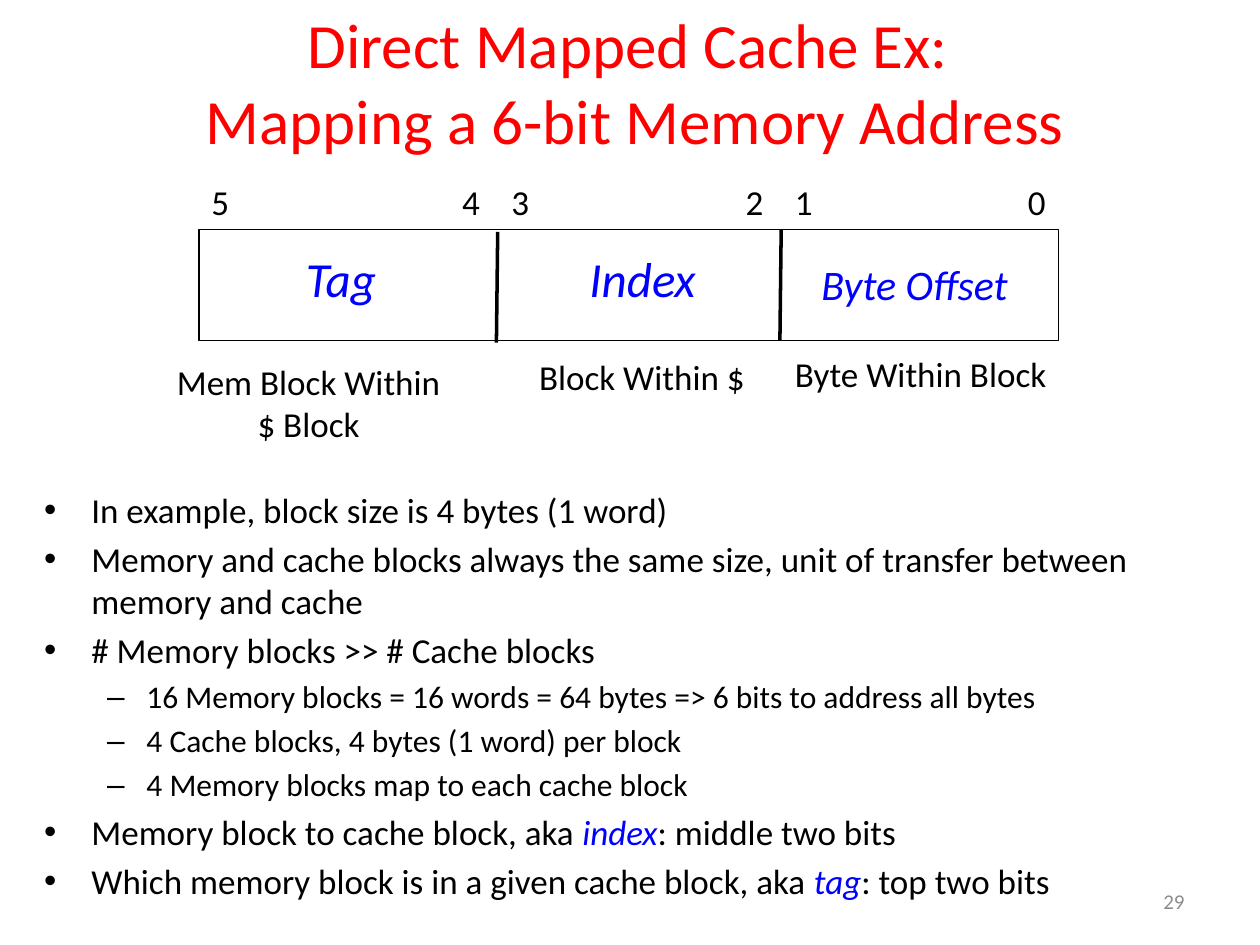
from dataclasses import dataclass

from lxml import etree
from pptx import Presentation
from pptx.dml.color import RGBColor
from pptx.enum.shapes import MSO_CONNECTOR, MSO_SHAPE
from pptx.enum.text import MSO_ANCHOR, MSO_AUTO_SIZE, PP_ALIGN
from pptx.oxml.ns import qn
from pptx.util import Inches, Pt

LEFT, CENTER, RIGHT = PP_ALIGN.LEFT, PP_ALIGN.CENTER, PP_ALIGN.RIGHT
TOP, MIDDLE = MSO_ANCHOR.TOP, MSO_ANCHOR.MIDDLE
FIXED, GROW = MSO_AUTO_SIZE.NONE, MSO_AUTO_SIZE.SHAPE_TO_FIT_TEXT
RECTANGLE = MSO_SHAPE.RECTANGLE
STRAIGHT = MSO_CONNECTOR.STRAIGHT


@dataclass(frozen=True)
class Theme:
    font: str = "Calibri"
    heading: RGBColor = RGBColor(0xFF, 0x00, 0x00)
    term: RGBColor = RGBColor(0x00, 0x00, 0xFF)
    text: RGBColor = RGBColor(0x00, 0x00, 0x00)
    muted: RGBColor = RGBColor(0x8C, 0x8C, 0x8C)
    title_size: int = 36
    field_size: int = 28
    offset_size: int = 24
    text_size: int = 20
    detail_size: int = 18
    number_size: int = 12


TITLE_LINES = ["Direct Mapped Cache Ex: ", "Mapping a 6-bit Memory Address"]

BULLETS = [
    (0, ["In example, block size is 4 bytes (1 word)"]),
    (0, ["Memory and cache blocks always the same size, unit of transfer between memory and cache"]),
    (0, ["# Memory blocks >> # Cache blocks"]),
    (1, ["16 Memory blocks = 16 words = 64 bytes => 6 bits to address all bytes"]),
    (1, ["4 Cache blocks, 4 bytes (1 word) per block"]),
    (1, ["4 Memory blocks map to each cache block"]),
    (0, ["Memory block to cache block, aka ", "index", ": middle two bits"]),
    (0, ["Which memory block is in a given cache block, aka ", "tag", ": top two bits"]),
]

BIT_POSITIONS = [("5", 1.58), ("4", 3.57), ("3", 3.96), ("2", 5.82), ("1", 6.21), ("0", 8.06)]
DIVIDERS = [(3.95, 1.84), (6.2, 1.82)]


class SlideBuilder:
    """Draws styled elements on the current slide."""

    def __init__(self, presentation, theme):
        self.theme = theme
        self.slide = presentation.slides.add_slide(presentation.slide_layouts[1])

    def place(self, shape, left, top, width, height):
        shape.left, shape.top = Inches(left), Inches(top)
        shape.width, shape.height = Inches(width), Inches(height)

    def run(self, paragraph, text, size, color, italic=False):
        run = paragraph.add_run()
        run.text = text
        run.font.name = self.theme.font
        run.font.size = Pt(size)
        run.font.italic = italic
        run.font.color.rgb = color

    def lines(self, paragraph, lines, size, color, italic=False):
        for index, line in enumerate(lines):
            if index:
                paragraph.add_line_break()
            self.run(paragraph, line, size, color, italic)

    def title(self, lines, *box):
        shape = self.slide.shapes.title
        self.place(shape, *box)
        frame = shape.text_frame
        frame.auto_size = FIXED
        frame.vertical_anchor = MIDDLE
        paragraph = frame.paragraphs[0]
        paragraph.alignment = CENTER
        self.lines(paragraph, lines, self.theme.title_size, self.theme.heading)

    def body(self, bullets, *box):
        shape = self.slide.placeholders[1]
        self.place(shape, *box)
        frame = shape.text_frame
        frame.auto_size = FIXED
        for index, (level, parts) in enumerate(bullets):
            paragraph = frame.add_paragraph() if index else frame.paragraphs[0]
            paragraph.level = level
            size = self.theme.detail_size if level else self.theme.text_size
            for position, part in enumerate(parts):
                is_term = position == 1
                color = self.theme.term if is_term else self.theme.text
                self.run(paragraph, part, size, color, is_term)

    def label(self, text, left, top, width, height=0.44, size=None, color=None,
              italic=False, alignment=LEFT, anchor=TOP, wrap=False):
        shape = self.slide.shapes.add_textbox(
            Inches(left), Inches(top), Inches(width), Inches(height))
        frame = shape.text_frame
        frame.word_wrap = wrap
        frame.auto_size = FIXED if anchor == MIDDLE else GROW
        frame.vertical_anchor = anchor
        paragraph = frame.paragraphs[0]
        paragraph.alignment = alignment
        self.lines(paragraph, text.split("\n"), size or self.theme.text_size,
                   color or self.theme.text, italic)

    def field(self, name, left, top, width, height, size):
        self.label(name, left, top, width, height, size, self.theme.term, italic=True)

    def rectangle(self, left, top, width, height):
        shape = self.slide.shapes.add_shape(
            RECTANGLE, Inches(left), Inches(top), Inches(width), Inches(height))
        shape.shadow.inherit = False
        shape.fill.background()
        shape.line.color.rgb = self.theme.text
        shape.line.width = Pt(0.75)

    def divider(self, x, top, height):
        connector = self.slide.shapes.add_connector(
            STRAIGHT, Inches(x), Inches(top), Inches(x - 0.01), Inches(top + height))
        connector.line.color.rgb = self.theme.text
        connector.line.width = Pt(2)
        etree.SubElement(connector.element.spPr, qn("a:effectLst"))


def main():
    presentation = Presentation()
    presentation.slide_width, presentation.slide_height = Inches(10), Inches(7.5)
    theme = Theme()
    builder = SlideBuilder(presentation, theme)

    builder.title(TITLE_LINES, 0.33, 0.17, 9.42, 0.95)
    builder.body(BULLETS, 0.25, 3.83, 9.75, 3.42)
    builder.label("29", 7.17, 6.95, 2.33, 0.4, theme.number_size, theme.muted,
                  alignment=RIGHT, anchor=MIDDLE, wrap=True)

    builder.rectangle(1.58, 1.82, 6.82, 0.88)
    for x, top in DIVIDERS:
        builder.divider(x, top, 0.88)
    for bit, left in BIT_POSITIONS:
        builder.label(bit, left, 1.38, 0.34)

    builder.field("Tag", 2.33, 1.92, 0.9, 0.57, theme.field_size)
    builder.field("Index", 4.58, 1.92, 1.16, 0.57, theme.field_size)
    builder.field("Byte Offset", 6.42, 2, 1.79, 0.5, theme.offset_size)

    builder.label("Mem Block Within\n$ Block", 1, 2.81, 2.9, 0.77, alignment=CENTER, wrap=True)
    builder.label("Block Within $", 4.17, 2.77, 1.85, alignment=CENTER)
    builder.label("Byte Within Block", 6.21, 2.75, 2.22)

    presentation.save("out.pptx")


if __name__ == "__main__":
    main()
